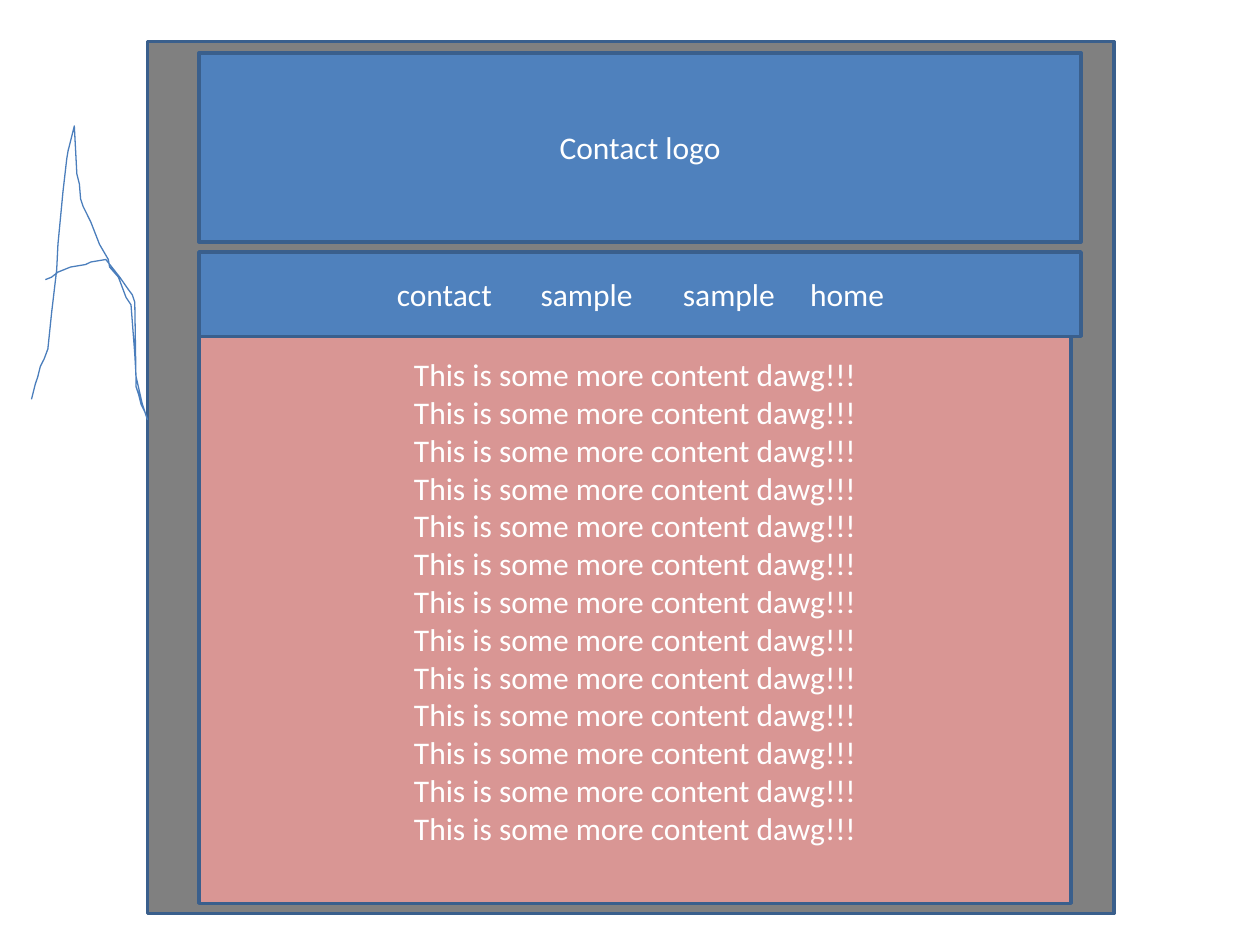
from lxml import etree
from pptx import Presentation
from pptx.dml.color import RGBColor
from pptx.enum.shapes import MSO_SHAPE
from pptx.enum.text import MSO_ANCHOR, PP_ALIGN
from pptx.oxml.ns import qn
from pptx.util import Inches, Pt

RECTANGLE = MSO_SHAPE.RECTANGLE
MIDDLE = MSO_ANCHOR.MIDDLE
CENTER, LEFT = PP_ALIGN.CENTER, PP_ALIGN.LEFT

BLUE, BORDER, INK = "4F81BD", "3A5F8C", "4B7EBC"
GRAY, PINK, WHITE = "808080", "D99694", "FFFFFF"

CONTENT_LINE = "This is some more content dawg!!!"
CONTENT_COUNT = 13
NAV_LABELS = ["contact", "sample", "sample", "home"]
NAV_START = 1.57
NAV_STOPS = [1.14, 2.27, 3.28]

SCRIBBLE_POINTS = [
    (0, 217), (3, 205), (5, 199), (7, 191), (10, 185), (13, 177), (16, 148),
    (20, 114), (21, 94), (25, 52), (28, 26), (29, 20), (31, 12), (34, 0),
    (36, 38), (38, 46), (39, 58), (41, 64), (47, 76), (54, 94), (61, 106),
    (62, 112), (69, 120), (75, 136), (79, 142), (82, 181), (83, 199),
    (88, 221), (90, 227), (92, 233), (90, 227), (87, 221), (85, 213),
    (83, 207), (82, 140), (80, 134), (77, 130), (70, 120), (59, 106),
    (47, 108), (43, 110), (31, 112), (21, 116), (16, 120), (11, 122),
]


def color(value):
    return RGBColor.from_string(value)


def add_panel(page, box, fill):
    panel = page.shapes.add_shape(RECTANGLE, *[Inches(length) for length in box])
    panel.shadow.inherit = False
    panel.fill.solid()
    panel.fill.fore_color.rgb = color(fill)
    panel.line.color.rgb = color(BORDER)
    panel.line.width = Pt(2)
    return panel


def write_lines(panel, lines, align=CENTER):
    frame = panel.text_frame
    frame.word_wrap = True
    frame.vertical_anchor = MIDDLE
    for index, line in enumerate(lines):
        para = frame.add_paragraph() if index else frame.paragraphs[0]
        para.alignment = align
        span = para.add_run()
        span.text = line
        span.font.name = "Calibri"
        span.font.size = Pt(18)
        span.font.color.rgb = color(WHITE)
    return frame


def add_header(page, box):
    write_lines(add_panel(page, box, BLUE), ["Contact logo"])


def add_navigation(page, box):
    frame = write_lines(add_panel(page, box, BLUE), ["\t".join(NAV_LABELS)], LEFT)
    frame.margin_left = Inches(NAV_START)
    properties = frame.paragraphs[0]._p.get_or_add_pPr()
    tabs = etree.SubElement(properties, qn("a:tabLst"))
    for stop in NAV_STOPS:
        etree.SubElement(tabs, qn("a:tab"), pos=str(Inches(stop)), algn="l")


def add_content(page, box):
    frame = write_lines(add_panel(page, box, PINK), [CONTENT_LINE] * CONTENT_COUNT)
    frame.margin_bottom = Inches(0.35)


def add_scribble(page, left, top):
    start, *rest = SCRIBBLE_POINTS
    builder = page.shapes.build_freeform(*start, scale=Inches(0.01))
    builder.add_line_segments(rest, close=False)
    scribble = builder.convert_to_shape(Inches(left), Inches(top))
    scribble.shadow.inherit = False
    scribble.fill.background()
    scribble.line.color.rgb = color(INK)
    scribble.line.width = Pt(0.75)


def main():
    deck = Presentation()
    deck.slide_width, deck.slide_height = Inches(10), Inches(7.5)
    page = deck.slides.add_slide(deck.slide_layouts[6])
    add_panel(page, (1.17, 0.33, 7.67, 6.92), GRAY)
    add_navigation(page, (1.58, 2, 7, 0.67))
    add_content(page, (1.58, 2.67, 6.92, 4.5))
    add_header(page, (1.58, 0.42, 7, 1.5))
    add_scribble(page, 0.25, 1)
    deck.save("out.pptx")


if __name__ == "__main__":
    main()
